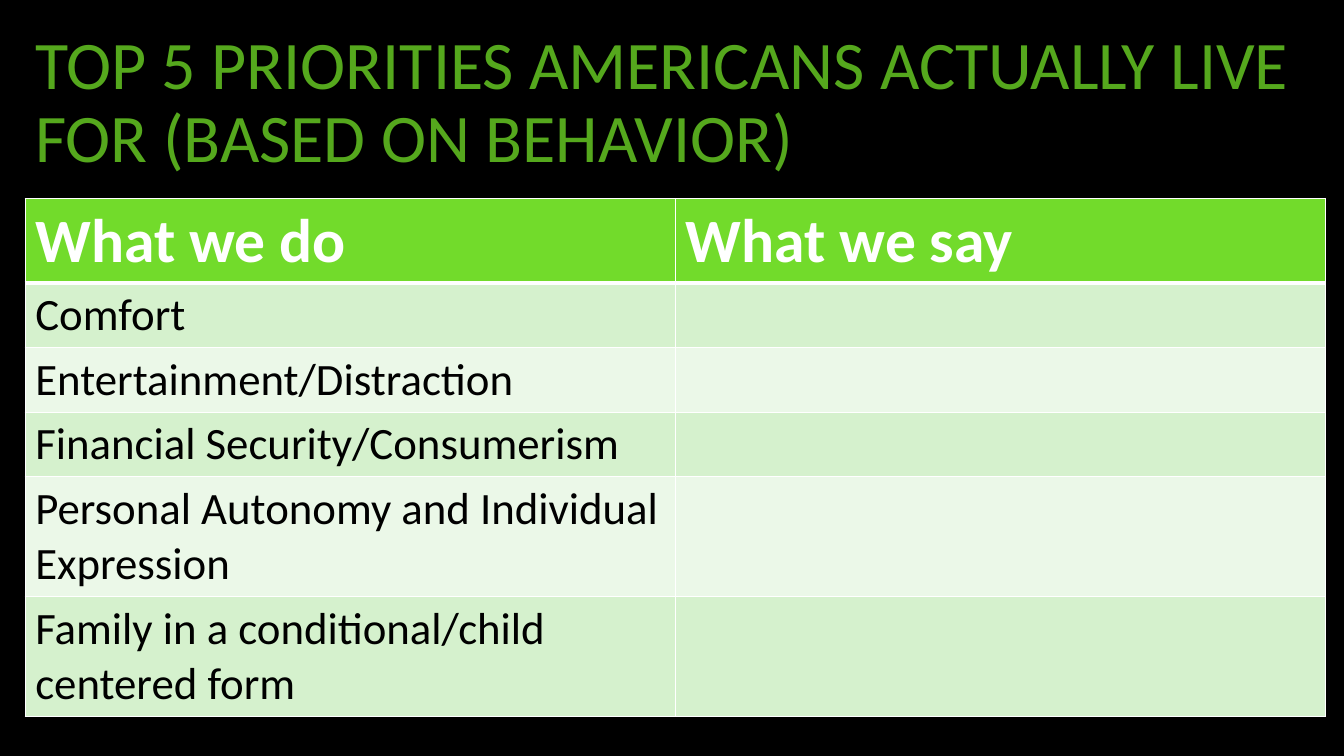
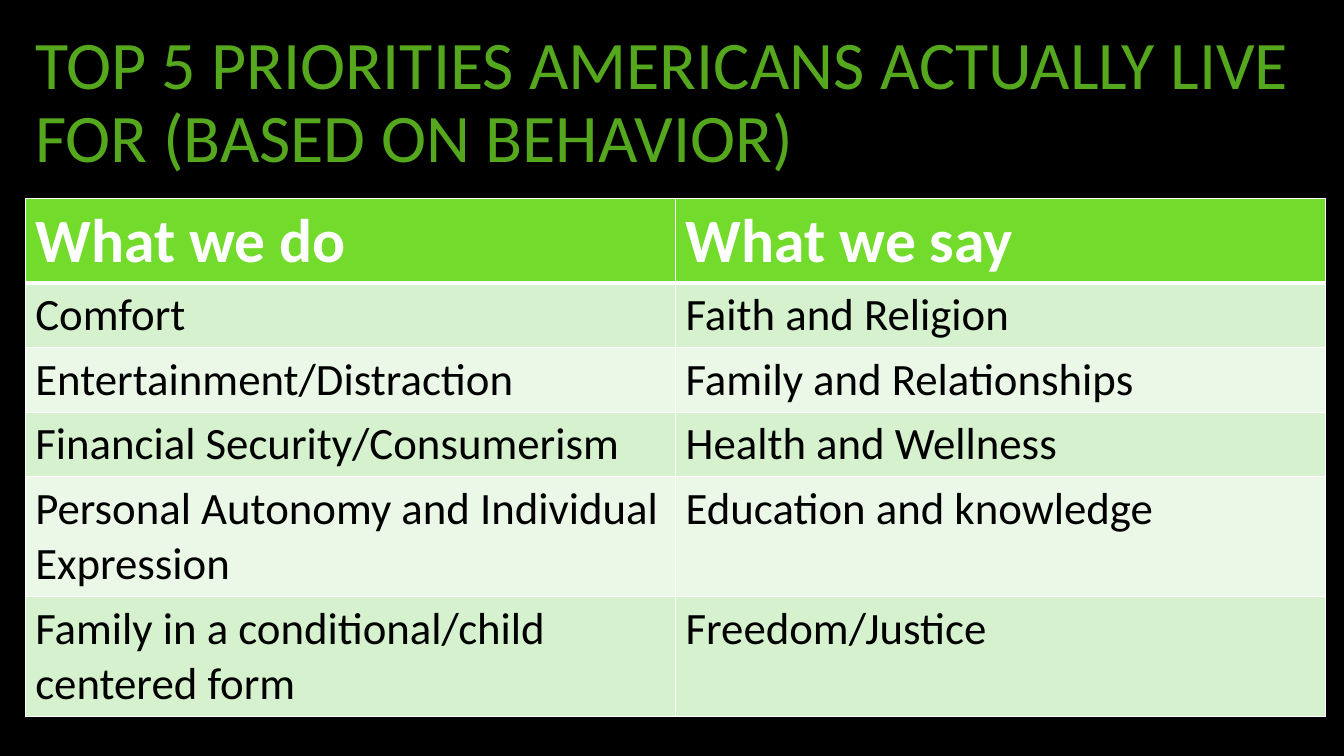
from pptx import Presentation
from pptx.dml.color import RGBColor as RGB
from pptx.enum.text import MSO_ANCHOR as Anchor
from pptx.oxml import parse_xml
from pptx.oxml.ns import nsdecls
from pptx.util import Inches, Pt

INK = {
    "back": "000000", "title": "55A81D", "head": "72DB2B", "odd": "D5F1CD",
    "even": "EBF8E8", "text": "000000", "white": "FFFFFF",
}
FONT = "Calibri"
STYLES = {
    "title": {"size": Pt(48.6), "bold": False, "name": FONT},
    "head": {"size": Pt(44), "bold": True, "name": FONT},
    "body": {"size": Pt(32), "bold": False, "name": FONT},
}
LEFT, WIDTH = 0.25, 12.9
TITLE_BOX = (LEFT, 0.22, WIDTH, 1.62)
TABLE_BOX = (LEFT, 1.97, WIDTH, 5.14)
ROWS = (0.84, 0.64, 0.64, 0.64, 1.19, 1.19)

TITLE = "TOP 5 PRIORITIES AMERICANS ACTUALLY LIVE FOR (BASED ON BEHAVIOR)"
HEADS = ("What we do", "What we say")
DO = (
    "Comfort",
    "Entertainment/Distraction",
    "Financial Security/Consumerism",
    "Personal Autonomy and Individual Expression",
    "Family in a conditional/child centered form",
)
SAY = (
    "Faith and Religion",
    "Family and Relationships",
    "Health and Wellness",
    "Education and knowledge",
    "Freedom/Justice",
)


def style(font, kind, ink):
    for key, value in STYLES[kind].items():
        setattr(font, key, value)
    font.color.rgb = RGB.from_string(INK[ink])


def add_title(slide, box):
    frame = slide.shapes.add_textbox(*map(Inches, box)).text_frame
    frame.word_wrap = True
    frame.vertical_anchor = Anchor.MIDDLE
    para = frame.paragraphs[0]
    para.line_spacing = 0.9
    run = para.add_run()
    run.text = TITLE
    style(run.font, "title", "title")


def add_edges(cell, row):
    """Draw white cell borders, thicker between the header and the body."""
    wide = {(0, "B"), (1, "T")}
    props = cell._tc.get_or_add_tcPr()
    for side in "LRTB":
        size = Pt(3 if (row, side) in wide else 1)
        props.append(parse_xml(
            f'<a:ln{side} {nsdecls("a")} w="{size}"><a:solidFill>'
            f'<a:srgbClr val="{INK["white"]}"/></a:solidFill></a:ln{side}>'))


def fill_cell(cell, row, text):
    add_edges(cell, row)
    band = "head" if row == 0 else "odd" if row % 2 else "even"
    cell.fill.solid()
    cell.fill.fore_color.rgb = RGB.from_string(INK[band])
    para = cell.text_frame.paragraphs[0]
    if text:
        run = para.add_run()
        run.text = text
        style(run.font, *(("body", "text") if row else ("head", "white")))


def add_grid(slide, box, says):
    data = [HEADS, *zip(DO, says)]
    table = slide.shapes.add_table(
        len(data), len(HEADS), *map(Inches, box)).table
    for col in table.columns:
        col.width = Inches(box[2] / len(HEADS))
    for row, (texts, high) in enumerate(zip(data, ROWS)):
        table.rows[row].height = Inches(high)
        for col, text in enumerate(texts):
            fill_cell(table.cell(row, col), row, text)


def add_slide(deck, says):
    slide = deck.slides.add_slide(deck.slide_layouts[6])
    back = slide.background.fill
    back.solid()
    back.fore_color.rgb = RGB.from_string(INK["back"])
    add_title(slide, TITLE_BOX)
    add_grid(slide, TABLE_BOX, says)


def main():
    deck = Presentation()
    deck.slide_width, deck.slide_height = Inches(13.33), Inches(7.5)
    for says in ([""] * len(DO), SAY):
        add_slide(deck, says)
    deck.save("out.pptx")


if __name__ == "__main__":
    main()
